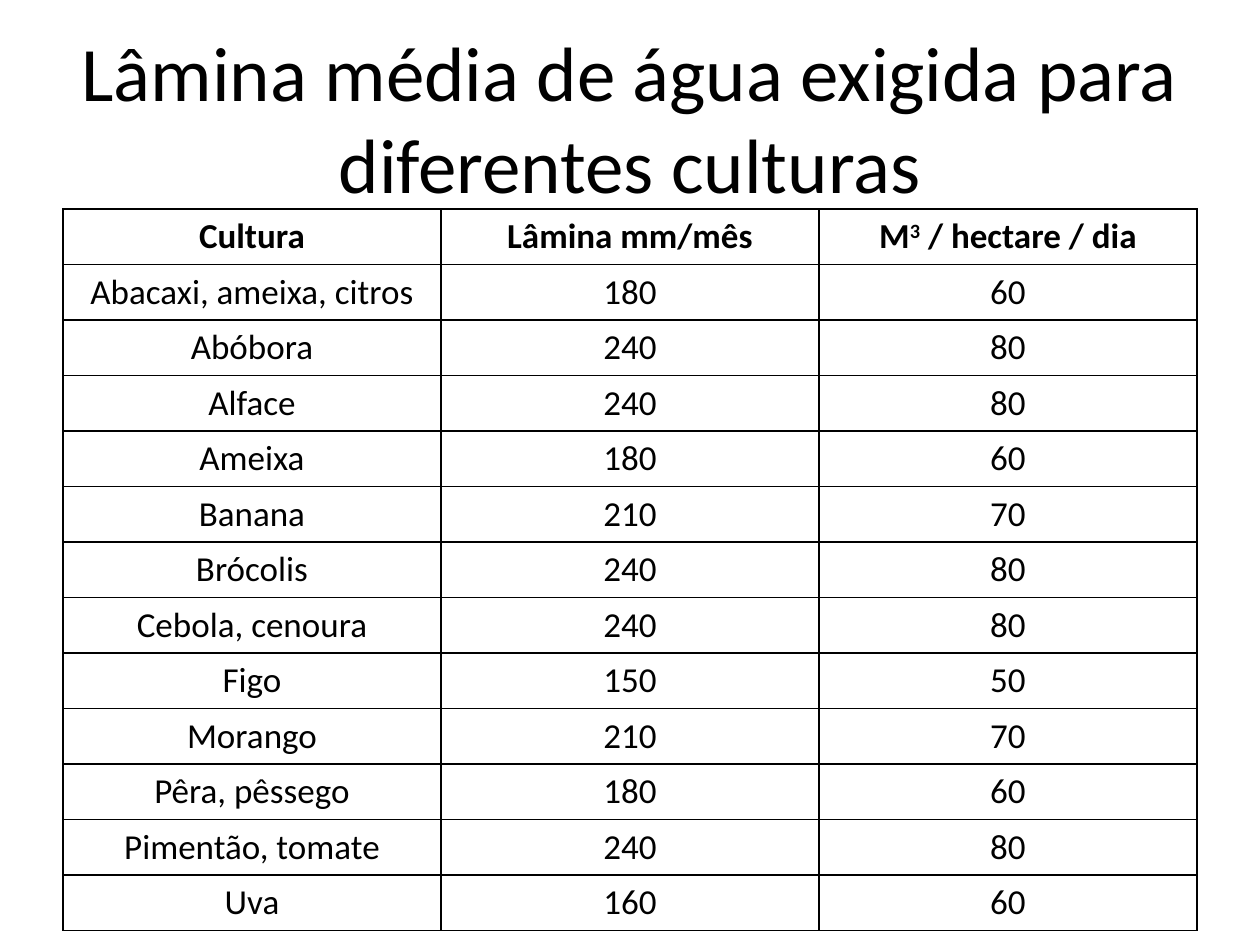
from lxml import etree
from pptx import Presentation
from pptx import util as u
from pptx.dml.color import RGBColor
from pptx.enum import text
from pptx.oxml.ns import qn

BLACK = RGBColor(0x00, 0x00, 0x00)
WHITE = RGBColor(0xFF, 0xFF, 0xFF)
PX = u.Inches(1) / 126

TITLE = "Lâmina média de água exigida para diferentes culturas"
HEADER = ["Cultura", "Lâmina mm/mês", ("M", "3", " / hectare / dia")]
CROPS = [
    ("Abacaxi, ameixa, citros", 180, 60),
    ("Abóbora", 240, 80),
    ("Alface", 240, 80),
    ("Ameixa", 180, 60),
    ("Banana", 210, 70),
    ("Brócolis", 240, 80),
    ("Cebola, cenoura", 240, 80),
    ("Figo", 150, 50),
    ("Morango", 210, 70),
    ("Pêra, pêssego", 180, 60),
    ("Pimentão, tomate", 240, 80),
    ("Uva", 160, 60),
]


def px(*lengths):
    return [round(length * PX) for length in lengths]


class SlideBuilder:
    font = "Calibri"
    title_size = 44
    table_size = 20
    border_width = u.Pt(1)

    def __init__(self, slide):
        self.slide = slide

    def style(self, paragraph, size, bold=False):
        paragraph.alignment = text.PP_ALIGN.CENTER
        for run in paragraph.runs:
            run.font.name = self.font
            run.font.size = u.Pt(size)
            run.font.bold = bold
            run.font.color.rgb = BLACK

    def title(self, wording, left, top, width, height):
        shape = self.slide.shapes.title
        shape.left, shape.top, shape.width, shape.height = px(left, top, width, height)
        frame = shape.text_frame
        frame.text = wording
        frame.word_wrap = True
        frame.auto_size = text.MSO_AUTO_SIZE.NONE
        frame.vertical_anchor = text.MSO_ANCHOR.MIDDLE
        self.style(frame.paragraphs[0], self.title_size)

    def table(self, rows, left, top, width, height):
        frame = self.slide.shapes.add_table(
            len(rows), len(rows[0]), *px(left, top, width, height))
        for row_index, row in enumerate(rows):
            for column_index, value in enumerate(row):
                cell = frame.table.cell(row_index, column_index)
                self.cell(cell, value, bold=row_index == 0)

    def cell(self, cell, value, bold):
        paragraph = cell.text_frame.paragraphs[0]
        if isinstance(value, tuple):
            base, exponent, rest = [paragraph.add_run() for _ in value]
            base.text, exponent.text, rest.text = value
            exponent.font._element.set("baseline", "30000")
        else:
            paragraph.text = str(value)
        self.style(paragraph, self.table_size, bold)
        cell.fill.solid()
        cell.fill.fore_color.rgb = WHITE
        self.borders(cell)

    def borders(self, cell):
        properties = cell._tc.get_or_add_tcPr()
        # Border lines come before the fill in the cell properties
        for index, side in enumerate(("lnL", "lnR", "lnT", "lnB")):
            line = etree.Element(qn(f"a:{side}"), w=str(self.border_width))
            fill = etree.SubElement(line, qn("a:solidFill"))
            etree.SubElement(fill, qn("a:srgbClr"), val=str(BLACK))
            properties.insert(index, line)


def main():
    presentation = Presentation()
    presentation.slide_width, presentation.slide_height = u.Inches(10), u.Inches(7.5)
    title_only = presentation.slide_layouts[5]
    builder = SlideBuilder(presentation.slides.add_slide(title_only))

    # Heading
    builder.title(TITLE, 63, 38, 1134, 157)

    # Water demand by crop
    builder.table([HEADER, *CROPS], 63, 209, 1134, 722)

    presentation.save("out.pptx")


if __name__ == "__main__":
    main()
